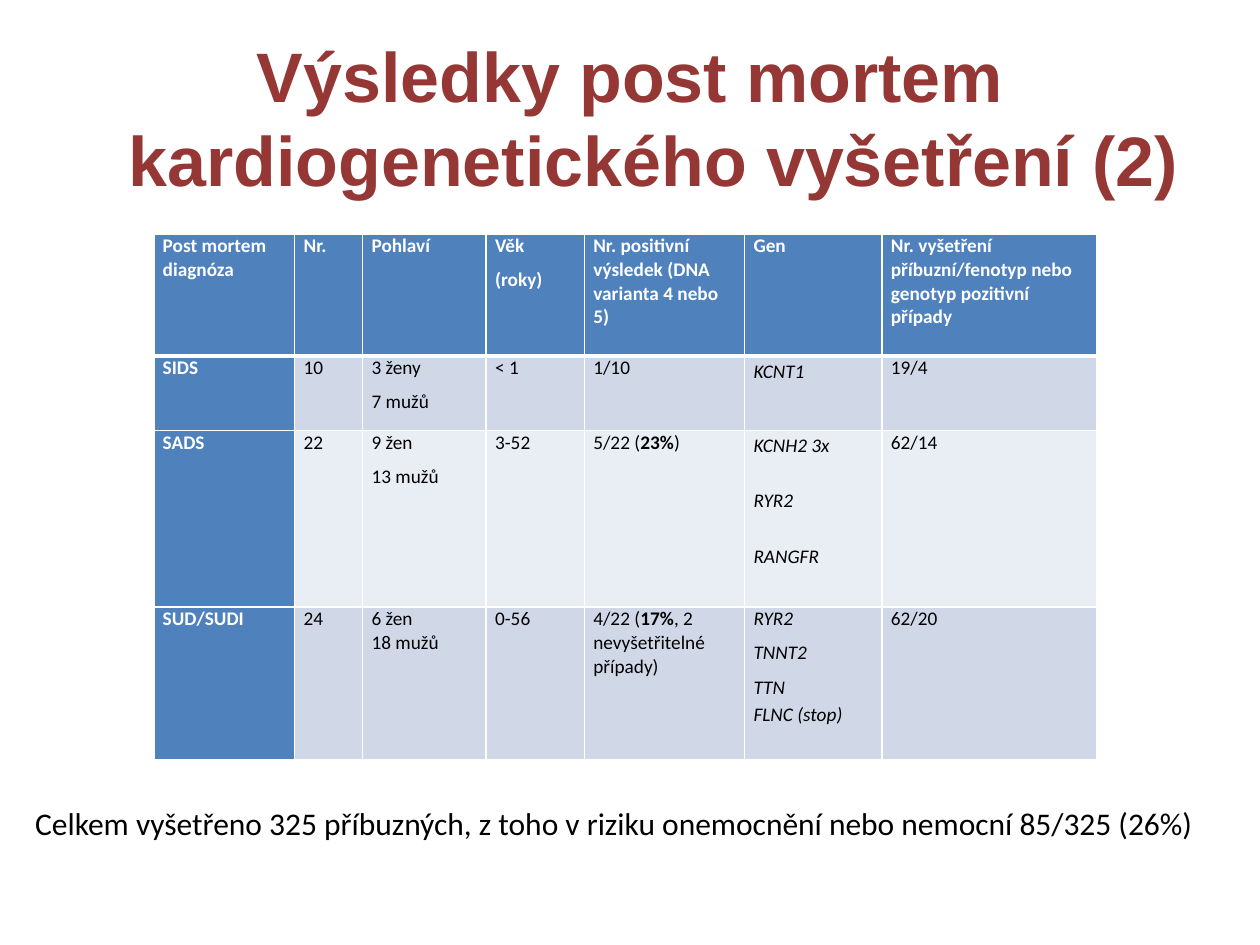
from pptx import Presentation
from pptx.dml.color import RGBColor
from pptx.enum.text import MSO_ANCHOR, MSO_AUTO_SIZE, PP_ALIGN
from pptx.oxml.ns import qn
from pptx.util import Cm, Pt
from lxml.etree import SubElement

INK = {"title": "953735", "head": "4F81BD", "odd": "D0D8E8",
       "even": "E9EDF4", "white": "FFFFFF", "black": "000000"}


def write(frame, text, size=11, font="Calibri", color="black", bold=False,
          italic=False, align=PP_ALIGN.LEFT, before=6, after=0, lines=None):
    """One paragraph per line of text; ** switches bold on and off."""
    for i, line in enumerate(text.split("\n")):
        para = frame.add_paragraph() if i else frame.paragraphs[0]
        para.alignment = align
        para.space_before = Pt(before if i else 0)
        para.space_after = Pt(after)
        if lines:
            para.line_spacing = lines
        for j, part in enumerate(line.split("**")):
            run = para.add_run()
            run.text = part
            run.font.size = Pt(size)
            run.font.name = font
            run.font.bold = bold or j % 2 == 1
            run.font.italic = italic
            run.font.color.rgb = RGBColor.from_string(INK[color])


def edge(cell, side, width):
    """White border on one side of a cell."""
    line = SubElement(cell._tc.get_or_add_tcPr(), qn("a:ln" + side),
                      w=str(Pt(width)))
    fill = SubElement(line, qn("a:solidFill"))
    SubElement(fill, qn("a:srgbClr"), val=INK["white"])


deck = Presentation()
deck.slide_width, deck.slide_height = Cm(25.4), Cm(19.05)
slide = deck.slides.add_slide(deck.slide_layouts[6])

# Title, with a hanging indent
title = slide.shapes.add_textbox(Cm(1.27), Cm(0.76), Cm(22.86), Cm(3.18))
frame = title.text_frame
frame.word_wrap = True
frame.vertical_anchor = MSO_ANCHOR.MIDDLE
write(frame, "Výsledky post mortem kardiogenetického vyšetření (2)",
      size=40, font="Arial", color="title", bold=True, align=PP_ALIGN.CENTER)
props = frame.paragraphs[0]._p.get_or_add_pPr()
props.set("marL", str(Cm(0.95)))
props.set("indent", str(-Cm(0.95)))

# Table of results
rows = [
    ["Post mortem diagnóza", "Nr.", "Pohlaví", "Věk\n(roky)",
     "Nr. positivní výsledek (DNA varianta 4 nebo 5)", "Gen",
     "Nr. vyšetření příbuzní/fenotyp nebo genotyp pozitivní případy"],
    ["SIDS", "10", "3 ženy\n7 mužů", "< 1", "1/10", "KCNT1", "19/4"],
    ["SADS", "22", "9 žen\n13 mužů", "3-52", "5/22 (**23%**)",
     "KCNH2 3x\nRYR2\nRANGFR", "62/14"],
    ["SUD/SUDI", "24", "6 žen\n18 mužů", "0-56",
     "4/22 (**17%**, 2 nevyšetřitelné případy)",
     "RYR2\nTNNT2\nTTN\nFLNC (stop)", "62/20"],
]
wide = [2.84, 1.37, 2.49, 1.98, 3.23, 2.77, 4.32]
high = [2.46, 1.5, 3.56, 3.07]
GENE, LAST = 5, 3
table = slide.shapes.add_table(len(rows), len(wide), Cm(3.1), Cm(4.72),
                               Cm(sum(wide)), Cm(sum(high))).table
for col, width in zip(table.columns, wide):
    col.width = Cm(width)
for row, height in zip(table.rows, high):
    row.height = Cm(height)

for r, row in enumerate(rows):
    for c, text in enumerate(row):
        cell = table.cell(r, c)
        cell.margin_left = cell.margin_right = Cm(0.18)
        cell.margin_top = cell.margin_bottom = 0
        for side in "LRTB":
            thick = (r, side) in [(0, "B"), (1, "T")]
            edge(cell, side, 3 if thick else 1)
        head = r == 0 or c == 0
        cell.fill.solid()
        cell.fill.fore_color.rgb = RGBColor.from_string(
            INK["head" if head else "odd" if r % 2 else "even"])
        gene = c == GENE and not head
        loose = gene and r != LAST
        write(cell.text_frame, text, bold=head, italic=gene,
              color="white" if head else "black",
              before=0 if r == LAST and not gene else 6,
              after=10 if loose else 0, lines=1.15 if loose else None)

# The last gene sits close to the one above
final = table.cell(LAST, GENE).text_frame.paragraphs[-1]
final.space_before, final.space_after = Pt(0), Pt(10)
final.line_spacing = 1.15

# Summary line
note = slide.shapes.add_textbox(Cm(0.46), Cm(16.08), Cm(24.28), Cm(1.02))
note.text_frame.word_wrap = False
note.text_frame.auto_size = MSO_AUTO_SIZE.SHAPE_TO_FIT_TEXT
write(note.text_frame, "Celkem vyšetřeno 325 příbuzných, z toho v riziku "
      "onemocnění nebo nemocní 85/325 (26%)", size=18)

deck.save("out.pptx")
